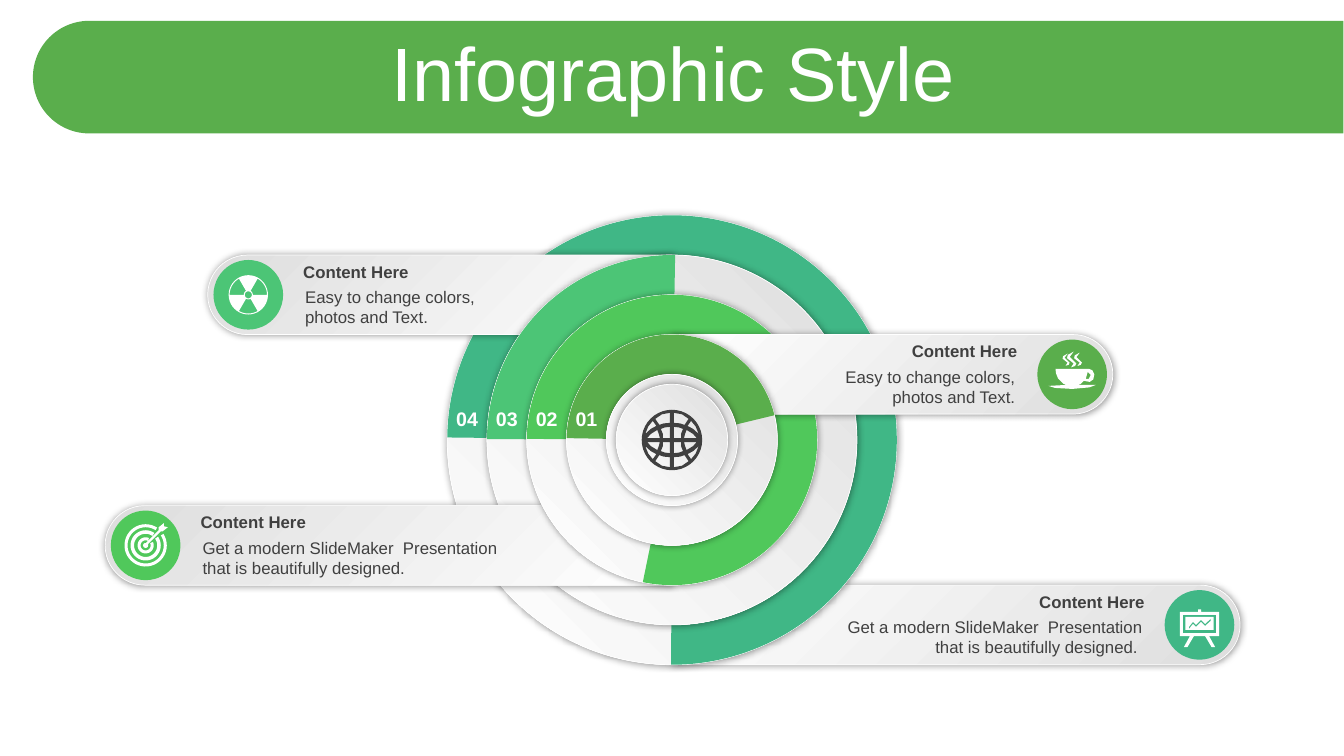
import math

import pptx
import pptx.dml.color
import pptx.enum.shapes
import pptx.enum.text
import pptx.oxml
import pptx.util

SHAPE = pptx.enum.shapes.MSO_SHAPE
ALIGN = pptx.enum.text.PP_ALIGN
NS = "http://schemas.openxmlformats.org/drawingml/2006/main"

# Grid: everything sits around the hub, measured in ring bands
WIDTH, HEIGHT = 13.33, 7.5
HUB_X, HUB_Y = WIDTH * 0.5, HEIGHT * 0.582
BAND = WIDTH * 0.0296
HUB_RADIUS = 1.65 * BAND

DARK, WHITE, SILVER, GREEN = "404040", "FFFFFF", "DEDEDE", "5AAE4C"
EASY = "Easy to change colors, photos and Text."
MODERN = "Get a modern SlideMaker  Presentation that is beautifully designed."


def inches(value):
    return pptx.util.Inches(value)


def paint(color_format, color):
    color_format.rgb = pptx.dml.color.RGBColor.from_string(color)


def plain(shape, color):
    shape.shadow.inherit = False
    shape.fill.solid()
    paint(shape.fill.fore_color, color)
    shape.line.fill.background()
    return shape


def centred(slide, preset, x, y, width, height):
    return slide.shapes.add_shape(
        preset, inches(x - width / 2), inches(y - height / 2), inches(width), inches(height))


def pillow(shape):
    """Silver gradient, thin white edge and soft shadow."""
    shape.fill.gradient()
    shape.fill.gradient_angle = 225
    for stop, color in zip(shape.fill.gradient_stops, (SILVER, WHITE)):
        paint(stop.color, color)
    paint(shape.line.color, WHITE)
    shape.line.width = pptx.util.Pt(0.5)
    shape.element.spPr.append(pptx.oxml.parse_xml(
        f'<a:effectLst xmlns:a="{NS}"><a:outerShdw blurRad="63500" dist="0" dir="0" '
        'algn="ctr" rotWithShape="0"><a:srgbClr val="000000"><a:alpha val="40000"/>'
        '</a:srgbClr></a:outerShdw></a:effectLst>'))


def disc(slide, x, y, size):
    return centred(slide, SHAPE.OVAL, x, y, size, size)


def capsule(slide, x, y, length, thickness, side):
    """Bar with a round tip that points left (-1) or right (1)."""
    bar = centred(slide, SHAPE.ROUND_2_SAME_RECTANGLE, x, y, thickness, length)
    bar.rotation = 90 * side % 360
    bar.adjustments[0] = 0.5
    return bar


def write(frame, text, size, color, align, bold=False):
    frame.word_wrap = True
    paragraph = frame.paragraphs[0]
    paragraph.alignment = align
    run = paragraph.add_run()
    run.text = text
    run.font.name = "Arial"
    run.font.size = pptx.util.Pt(size)
    run.font.bold = bold
    paint(run.font.color, color)
    return paragraph


def label(slide, left, top, width, height, *style, bold=False):
    box = slide.shapes.add_textbox(inches(left), inches(top), inches(width), inches(height))
    write(box.text_frame, *style, bold=bold)
    box.text_frame.auto_size = pptx.enum.text.MSO_AUTO_SIZE.SHAPE_TO_FIT_TEXT


def icon(slide, x, y, outlines, color=WHITE):
    """One freeform of several outlines; nested outlines become holes."""
    contours = [[(inches(x + dx), inches(y + dy)) for dx, dy in outline] for outline in outlines]
    builder = slide.shapes.build_freeform(*contours[0][0], scale=1.0)
    for index, points in enumerate(contours):
        if index:
            builder.move_to(*points[0])
        builder.add_line_segments(points[1:], close=True)
    return plain(builder.convert_to_shape(), color)


# Icon outlines, in inches around the icon's centre
def arc(radius, start=0, end=360, steps=40):
    angles = [math.radians(start + (end - start) * i / steps) for i in range(steps + 1)]
    return [(radius * math.cos(a), radius * math.sin(a)) for a in angles]


def band(outer, inner, start, end):
    return arc(outer, start, end) + arc(inner, end, start)


def rectangle(half_width, top, bottom):
    return [(-half_width, top), (half_width, top), (half_width, bottom), (-half_width, bottom)]


def radiation():
    return [arc(0.195), arc(0.035)] + [band(0.185, 0.045, a, a + 60) for a in (60, 180, 300)]


def target():
    rings = [band(outer, inner, gap - 45, 315 - gap)
             for outer, inner, gap in ((0.21, 0.18, 12), (0.15, 0.115, 10), (0.08, 0.05, 20))]
    arrow = [(0.18, -0.22), (0.18, -0.19), (0.22, -0.18), (0.17, -0.14), (0.15, -0.14),
             (0.02, -0.01)] + arc(0.025, -20, 250) + [(0, -0.02), (0.13, -0.15), (0.13, -0.18)]
    return rings + [arrow]


def cup():
    body = [(-0.165, -0.055), (0.165, -0.055), (0.2, -0.04), (0.22, 0), (0.21, 0.05),
            (0.175, 0.075), (0.115, 0.065), (0.085, 0.095), (0.055, 0.105), (0.235, 0.105),
            (0.17, 0.13), (0, 0.145), (-0.17, 0.135), (-0.235, 0.115), (-0.055, 0.105),
            (-0.085, 0.095), (-0.14, 0.04), (-0.16, -0.01)]
    handle = [(0.155, -0.025), (0.135, 0.045), (0.165, 0.045), (0.185, 0.005)]
    wisp = [(0, 0), (-0.03, 0.04), (-0.01, 0.06), (0.02, 0.09), (0.01, 0.11), (-0.02, 0.12),
            (0, 0.09), (-0.05, 0.05), (-0.045, 0.025)]
    steam = [[(x + dx * k, y + dy * k) for dx, dy in wisp]
             for x, y, k in ((-0.045, -0.205, 1), (0.015, -0.225, 1.3), (0.075, -0.215, 1.1))]
    return [body, handle] + steam


def easel():
    half = [(0.015, -0.155), (0.015, -0.13), (0.195, -0.13), (0.195, 0.11), (0.095, 0.11),
            (0.155, 0.22), (0.12, 0.22), (0.055, 0.11)]
    stand = half + [(-x, y) for x, y in reversed(half)]
    trend = [(-0.105, 0.02), (-0.065, -0.03), (-0.035, 0), (0.015, -0.05), (0.055, -0.01),
             (0.11, -0.06)]
    trend += [(x, y + 0.02) for x, y in reversed(trend)]
    return [stand, rectangle(0.165, -0.1, 0.08), rectangle(0.14, -0.08, 0.05), trend]


def globe():
    quarter = [
        [(0.02, 0.02), (0.13, 0.02), (0.125, 0.07), (0.11, 0.11), (0.06, 0.09), (0.02, 0.09)],
        [(0.02, 0.12), (0.06, 0.13), (0.1, 0.145), (0.06, 0.21), (0.02, 0.245)],
        [(0.17, 0.02), (0.27, 0.02), (0.255, 0.1), (0.21, 0.165), (0.15, 0.125), (0.165, 0.08)],
        [(0.06, 0.265), (0.11, 0.21), (0.14, 0.155), (0.19, 0.19), (0.135, 0.235)],
    ]
    return [arc(0.3)] + [[(x * sx, y * sy) for x, y in cell]
                         for sx in (-1, 1) for sy in (-1, 1) for cell in quarter]


def ring_radius(level):
    return HUB_RADIUS + level * BAND


def pill(slide, y, side, length):
    pillow(capsule(slide, HUB_X + side * length / 2, y, length, 2 * BAND, side))


def ring(slide, level, start, end, color):
    size = 2 * ring_radius(level)
    pillow(disc(slide, HUB_X, HUB_Y, size))
    sector = plain(centred(slide, SHAPE.PIE, HUB_X, HUB_Y, size, size), color)
    # Pie angles are stored in 60000ths of a degree, adjustments in 100000ths
    sector.adjustments[0], sector.adjustments[1] = start * 0.6, end * 0.6


def pill_content(slide, y, side, length, color, text, text_width, outlines):
    tip = HUB_X + side * length
    disc_x = tip - side * 1.02 * BAND
    plain(disc(slide, disc_x, y, 1.75 * BAND), color)
    icon(slide, disc_x, y, outlines)
    align = ALIGN.LEFT if side < 0 else ALIGN.RIGHT
    for words, inset, drop, width, height, bold in (
            (text, 2.2, 0.67, text_width, 1.27, False),
            ("Content Here", 2.15, 0.04, text_width + 0.1, 0.76, True)):
        edge = tip - side * inset * BAND
        left = edge if side < 0 else edge - width * BAND
        label(slide, left, y + (drop - 1) * BAND, width * BAND, height * BAND,
              words, 12, DARK, align, bold=bold)


def header(slide):
    banner = plain(capsule(slide, WIDTH * 0.512, HEIGHT * 0.102, WIDTH * 0.975,
                           HEIGHT * 0.149, -1), GREEN)
    title = slide.shapes.title
    title.element.addprevious(banner.element)
    title.left, title.top = inches(WIDTH * 0.026), inches(HEIGHT * 0.049)
    title.width, title.height = inches(WIDTH * 0.95), inches(HEIGHT * 0.105)
    title.text_frame.vertical_anchor = pptx.enum.text.MSO_ANCHOR.MIDDLE
    paragraph = write(title.text_frame, "Infographic Style", 54, WHITE, ALIGN.CENTER)
    paragraph.line_spacing = 0.9
    paragraph.space_before = pptx.util.Pt(10)


def main():
    deck = pptx.Presentation()
    deck.slide_width, deck.slide_height = inches(WIDTH), inches(HEIGHT)
    slide = deck.slides.add_slide(deck.slide_layouts[5])
    header(slide)

    # Level, side, pill length in bands, sector angles, colour, text, text width, icon
    levels = [
        (4, 1, 14.28, 180.65, 90.22, "40B786", MODERN + " ", 8.66, easel()),
        (3, -1, 11.67, 180.27, 270.98, "4CC576", EASY, 4.91, radiation()),
        (2, -1, 14.25, 180.42, 101.58, "50C85B", MODERN, 8.66, target()),
        (1, 1, 11.08, 180.98, 346.45, GREEN, EASY, 4.91, cup()),
    ]

    def pill_y(level):
        return HUB_Y + (-1) ** level * ring_radius(level - 1)

    # Pills and rings, outermost first
    for level, side, length, start, end, color, *_ in levels:
        pill(slide, pill_y(level), side, length * BAND)
        ring(slide, level, start, end, color)

    # Hub
    for radius in (HUB_RADIUS, HUB_RADIUS - BAND / 4):
        pillow(disc(slide, HUB_X, HUB_Y, 2 * radius))
    icon(slide, HUB_X, HUB_Y, globe(), DARK).rotation = 270

    # Pill contents and ring numbers
    for level, side, length, _, _, color, *content in levels:
        pill_content(slide, pill_y(level), side, length * BAND, color, *content)
        middle = HUB_X - ring_radius(level) + BAND / 2
        label(slide, middle - 0.62 * BAND, HUB_Y - 0.95 * BAND, 1.24 * BAND, 0.86 * BAND,
              f"{level:02}", 14, WHITE, ALIGN.CENTER, bold=True)

    deck.save("out.pptx")


if __name__ == "__main__":
    main()
